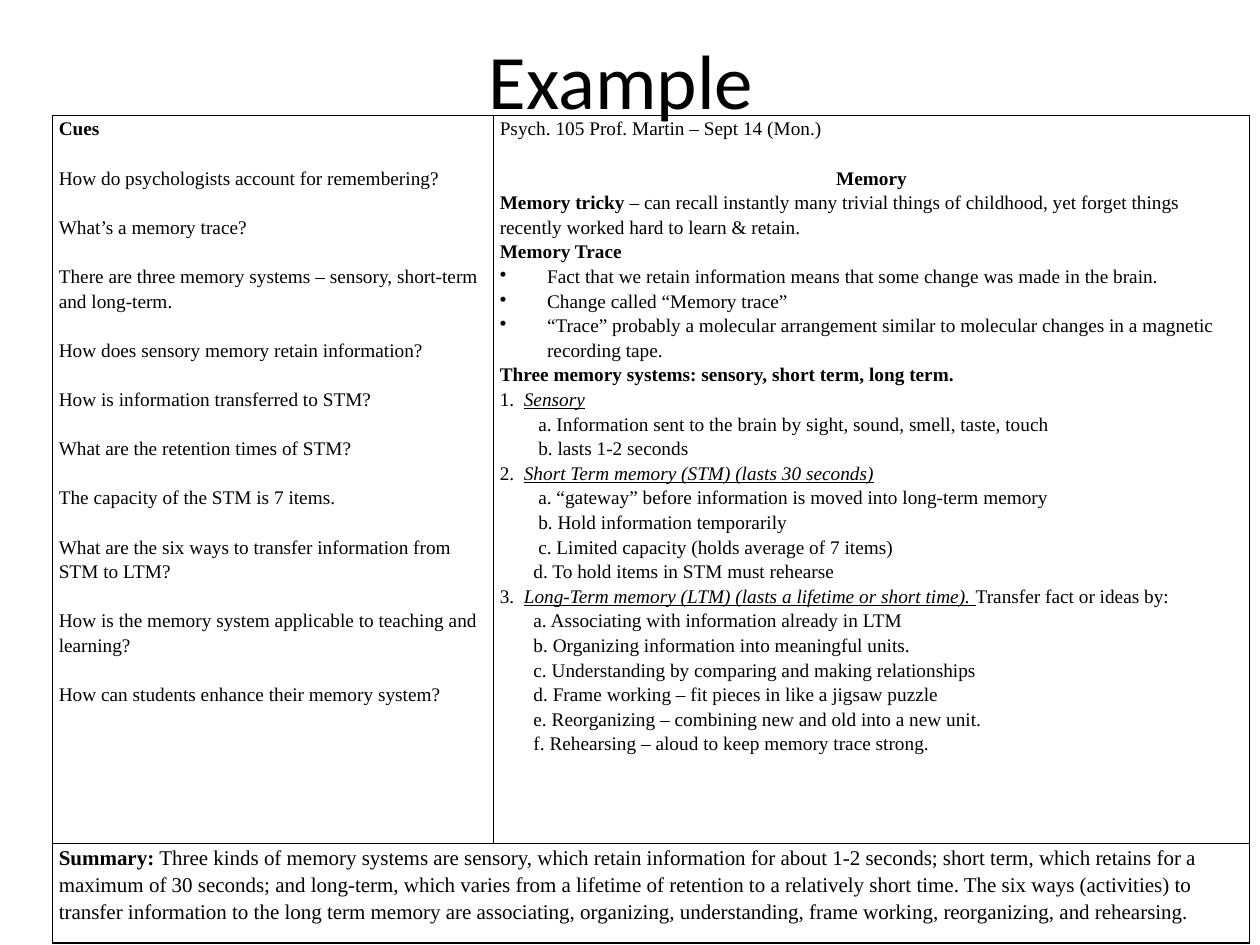
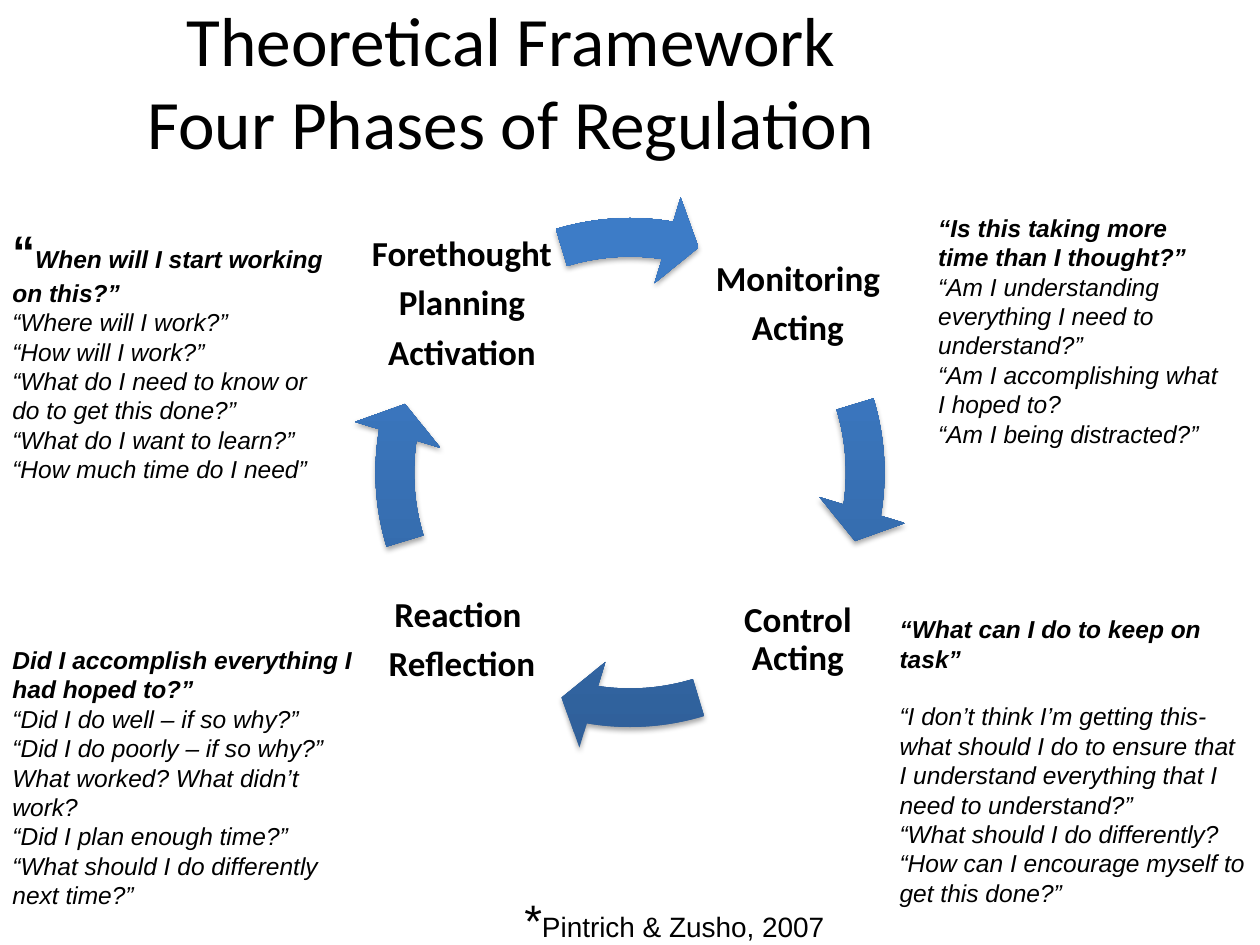
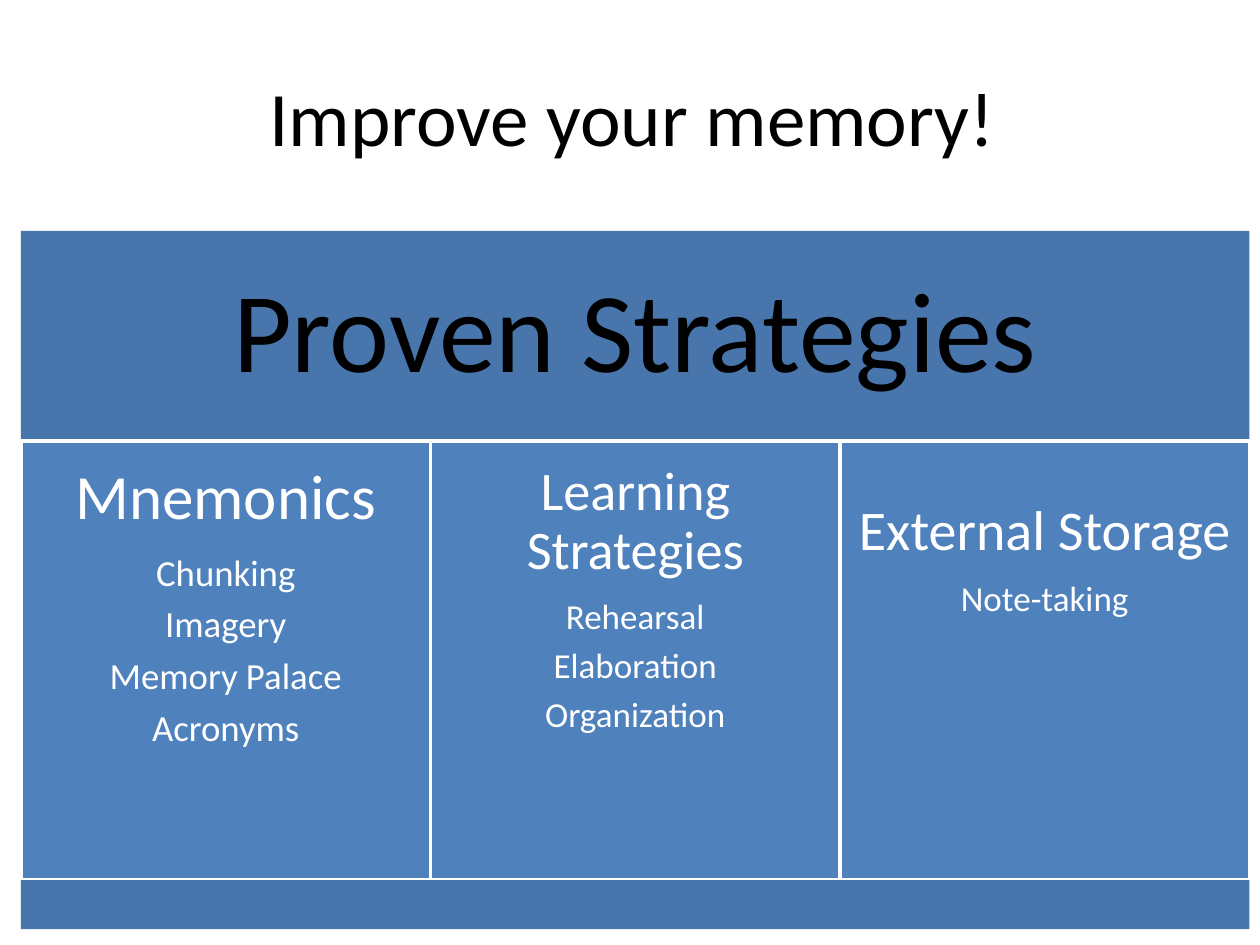
from lxml import etree
from pptx import Presentation, util as u
from pptx.dml.color import RGBColor
from pptx.enum import shapes, text
from pptx.oxml import parse_xml
from pptx.oxml.ns import nsdecls, qn

Pt = u.Pt
BLACK, WHITE = "000000", "FFFFFF"
BAND, PANEL = "4875AC", "4F81BD"
DARK, LIGHT = "2F5F99", "3D7CC7"
HEAD, NOTE, ASK = "Calibri", "Times New Roman", "Arial"

# Runs are (text, marks[, size]); marks hold b, i and u.
CUES = [
    "How do psychologists account for remembering?",
    "What’s a memory trace?",
    "There are three memory systems – sensory, short-term and long-term.",
    "How does sensory memory retain information?",
    "How is information transferred to STM?",
    "What are the retention times of STM?",
    "The capacity of the STM is 7 items.",
    "What are the six ways to transfer information from STM to LTM?",
    "How is the memory system applicable to teaching and learning?",
    "How can students enhance their memory system?",
]

# Each line of the notes is (kind, runs).
NOTES = [
    ("plain", [("Psych. 105 Prof. Martin – Sept 14 (Mon.)", "")]),
    ("topic", [("Memory", "b")]),
    ("plain", [("Memory tricky ", "b"),
               ("– can recall instantly many trivial things of childhood, "
                "yet forget things recently worked hard to learn & retain.", "")]),
    ("plain", [("Memory Trace", "b")]),
    ("bullet", [("Fact that we retain information means that some change "
                 "was made in the brain.", "")]),
    ("bullet", [("Change called “Memory trace”", "")]),
    ("bullet", [("“Trace” probably a molecular arrangement similar to "
                 "molecular changes in a magnetic recording tape.", "")]),
    ("plain", [("Three memory systems: sensory, short term, long term.", "b")]),
    ("number", [("1.\t", ""), ("Sensory", "iu")]),
    ("deep", [("a. Information sent to the brain by sight, sound, smell, "
               "taste, touch", "")]),
    ("deep", [("b. lasts 1-2 seconds", "")]),
    ("number", [("2.\t", ""), ("Short Term memory (STM) (lasts 30 seconds)", "iu")]),
    ("deep", [("a. “gateway” before information is moved into long-term memory", "")]),
    ("deep", [("b. Hold information temporarily", "")]),
    ("deep", [("c. Limited capacity (holds average of 7 items)", "")]),
    ("item", [("d. To hold items in STM must rehearse", "")]),
    ("number", [("3.\t", ""),
                ("Long-Term memory (LTM) (lasts a lifetime or short time). ", "iu"),
                ("Transfer fact or ideas by:", "")]),
    ("item", [("a. Associating with information already in LTM", "")]),
    ("item", [("b. Organizing information into meaningful units.", "")]),
    ("item", [("c. Understanding by comparing and making relationships", "")]),
    ("item", [("d. Frame working – fit pieces in like a jigsaw puzzle", "")]),
    ("item", [("e. Reorganizing – combining new and old into a new unit.", "")]),
    ("item", [("f. Rehearsing – aloud to keep memory trace strong.", "")]),
]
# Left margin and hanging indent of each kind
INDENT = {"plain": (0, 0), "topic": (0, 0), "bullet": (27, 27),
          "number": (13.75, 13.75), "deep": (22, 0), "item": (19.25, 0)}

SUMMARY = [
    ("Summary:", "b"),
    (" Three kinds of memory systems are sensory, which retain information for "
     "about 1-2 seconds; short term, which retains for a maximum of 30 seconds; "
     "and long-term, which varies from a lifetime of retention to a relatively "
     "short time. The six ways (activities) to transfer information to the long "
     "term memory are associating, organizing, understanding, frame working, "
     "reorganizing, and rehearsing.", ""),
]

# Clockwise from top right: (column, row, lines)
PHASES = [
    (1, 0, ["Monitoring", "Acting"]),
    (1, 1, ["Control Acting"]),
    (0, 1, ["Reaction ", "Reflection"]),
    (0, 0, ["Forethought", "Planning", "Activation"]),
]

# (box, runs of the lead question, gap below it, other questions)
ASKS = [
    ((507, 347.5, 213, 226), [("“What can I do to keep on task”", "bi")], 16.1,
     ["“I don’t think I’m getting this- what should I do to ensure that I "
      "understand everything that I need to understand?”",
      "“What should I do differently?",
      "“How can I encourage myself to get this done?”"]),
    ((529, 118, 176, 160.5), [("“Is this taking more time than I thought?”", "bi")], 0,
     ["“Am I understanding everything I need to understand?”",
      "“Am I accomplishing what I hoped to?",
      "“Am I being distracted?”"]),
    ((0, 124, 196, 158), [("“", "b", 26),
                          ("When will I start working on this?”", "bi")], 0,
     ["“Where will I work?”",
      "“How will I work?”",
      "“What do I need to know or do to get this done?”",
      "“What do I want to learn?”",
      "“How much time do I need”"]),
    ((0, 365, 217, 160.5), [("Did I accomplish everything I had hoped to?”", "bi")], 0,
     ["“Did I do well – if so why?”",
      "“Did I do poorly – if so why?”",
      "What worked? What didn’t work?",
      "“Did I plan enough time?”",
      "“What should I do differently next time?”"]),
]

# (heading, heading size, item size, top inset, items)
PANELS = [
    ("Mnemonics", 36, 21, 14, ["Chunking", "Imagery", "Memory Palace", "Acronyms"]),
    ("Learning Strategies", 31, 20, 13, ["Rehearsal", "Elaboration", "Organization"]),
    ("External Storage", 32, 20, 35, ["Note-taking"]),
]


def hue(code):
    return RGBColor.from_string(code)


def spots(box):
    return [Pt(n) for n in box]


def write(par, runs, font, size, color=BLACK, gap=0, lead=None, mid=False):
    """Fill a paragraph with runs; gap is the space above, lead the line spacing."""
    for words, marks, *own in runs:
        run = par.add_run()
        run.text = words
        face = run.font
        face.name, face.size = font, Pt(own[0] if own else size)
        face.color.rgb = hue(color)
        face.bold, face.italic, face.underline = (m in marks for m in "biu")
    par.space_before = Pt(gap)
    if lead:
        par.line_spacing = lead
    par.alignment = text.PP_ALIGN.CENTER if mid else text.PP_ALIGN.LEFT


def lines(frame):
    """Yield the first paragraph of a frame, then new ones."""
    yield frame.paragraphs[0]
    while True:
        yield frame.add_paragraph()


def stack(frame, rows, color):
    """Write centred, tight (words, size, marks) rows."""
    for (words, size, marks), par in zip(rows, lines(frame)):
        write(par, [(words, marks)], HEAD, size, color, lead=0.9, mid=True)
        par.space_after = Pt(round(size * 0.33, 2))


def inset(frame, side, top):
    frame.word_wrap = True
    frame.margin_left = frame.margin_right = Pt(side)
    frame.margin_top = frame.margin_bottom = Pt(top)


def start(deck, box, rows, size=44):
    """Add a slide with a centred title."""
    slide = deck.slides.add_slide(deck.slide_layouts[5])
    title = slide.shapes.title
    title.left, title.top, title.width, title.height = spots(box)
    frame = title.text_frame
    frame.auto_size = text.MSO_AUTO_SIZE.NONE
    frame.vertical_anchor = text.MSO_ANCHOR.MIDDLE
    for words, par in zip(rows, lines(frame)):
        write(par, [(words, "")], HEAD, size, mid=True)
    return slide


def textbox(slide, box, side=7.2, top=3.6):
    frame = slide.shapes.add_textbox(*spots(box)).text_frame
    inset(frame, side, top)
    return frame


def block(slide, box, fill, edge=None):
    shape = slide.shapes.add_shape(shapes.MSO_SHAPE.RECTANGLE, *spots(box))
    shape.shadow.inherit = False
    shape.fill.solid()
    shape.fill.fore_color.rgb = hue(fill)
    if edge:
        shape.line.color.rgb = hue(edge)
        shape.line.width = Pt(2)
    else:
        shape.line.fill.background()
    return shape.text_frame


def frame_cell(cell):
    """Give a cell thin black borders, no fill and narrow margins."""
    for side in "LRTB":
        cell._tc.get_or_add_tcPr().append(parse_xml(
            f'<a:ln{side} {nsdecls("a")} w="{Pt(1)}"><a:solidFill>'
            f'<a:srgbClr val="{BLACK}"/></a:solidFill></a:ln{side}>'))
    cell.fill.background()
    cell.margin_left = cell.margin_right = Pt(3.6)
    cell.margin_top = cell.margin_bottom = 0


def notes(deck):
    slide = start(deck, (36, 0, 648, 90), ["Example "])
    grid = slide.shapes.add_table(2, 2, *spots((30, 66, 684, 473))).table
    grid.first_row = grid.horz_banding = False
    for col, wide in zip(grid.columns, (252, 432)):
        col.width = Pt(wide)
    for row, high in zip(grid.rows, (416, 57)):
        row.height = Pt(high)
    for cell in grid.iter_cells():
        frame_cell(cell)
    grid.cell(1, 0).merge(grid.cell(1, 1))

    size, lead, line = 11, 1.15, 14.05
    rows = lines(grid.cell(0, 0).text_frame)
    write(next(rows), [("Cues", "b")], NOTE, size, lead=lead)
    for cue, par in zip(CUES, rows):
        write(par, [(cue, "")], NOTE, size, gap=line, lead=lead)

    for (kind, runs), par in zip(NOTES, lines(grid.cell(0, 1).text_frame)):
        topic = kind == "topic"
        write(par, runs, NOTE, size, gap=line if topic else 0, lead=lead, mid=topic)
        left, hang = INDENT[kind]
        props = par._p.get_or_add_pPr()
        props.set("marL", str(Pt(left)))
        props.set("indent", str(-Pt(hang)))
        if kind == "bullet":
            etree.SubElement(props, qn("a:buChar")).set("char", "•")

    write(grid.cell(1, 0).text_frame.paragraphs[0], SUMMARY, NOTE, 12, lead=lead)


def arrow(slide, step):
    """Draw one arc of the cycle, a quarter turn on for each step."""
    shape = slide.shapes.add_shape(
        shapes.MSO_SHAPE.CIRCULAR_ARROW, *spots((200, 110, 320, 320)))
    turn = 54 * step
    sizes = (0.069, 4.65, 5.51 + turn, (205.84 + turn) % 216, 0.08)
    for n, size in enumerate(sizes):
        shape.adjustments[n] = size
    shape.line.fill.background()
    shape.fill.gradient()
    shape.fill.gradient_angle = 90
    for stop, code, spot in zip(shape.fill.gradient_stops, (DARK, LIGHT), (0, 0.8)):
        stop.color.rgb, stop.position = hue(code), spot
    shape._element.spPr.append(parse_xml(
        f'<a:effectLst {nsdecls("a")}><a:outerShdw blurRad="{Pt(3.1)}" '
        f'dist="{Pt(1.8)}" dir="5400000" rotWithShape="0"><a:srgbClr val="{BLACK}">'
        '<a:alpha val="35000"/></a:srgbClr></a:outerShdw></a:effectLst>'))


def cycle(deck):
    slide = start(deck, (35, 1, 648, 90),
                  ["Theoretical Framework", "Four Phases of Regulation"], 39.6)
    first = slide.shapes.title.text_frame.paragraphs[0]
    first._p.get_or_add_pPr().set("marR", str(Pt(134)))

    for step, (col, row, words) in enumerate(PHASES):
        frame = textbox(slide, (207.5 + 192 * col, 117.5 + 192 * row, 113, 113), 2, 2)
        frame.vertical_anchor = text.MSO_ANCHOR.MIDDLE
        stack(frame, [(w, 20, "b") for w in words], BLACK)
        arrow(slide, step)

    for box, ask, gap, others in ASKS:
        rows = lines(textbox(slide, box))
        write(next(rows), ask, ASK, 14)
        for n, (words, par) in enumerate(zip(others, rows)):
            write(par, [(words, "i")], ASK, 14, gap=0 if n else gap)

    credit = textbox(slide, (292.5, 506, 203, 39))
    write(credit.paragraphs[0], [("*", "", 26), ("Pintrich & Zusho, 2007", "")], ASK, 16)


def panels(deck):
    slide = start(deck, (72, 30, 579, 72), ["Improve your memory!"])
    left, wide, top, high = 12, 234, 252, 251
    full = wide * len(PANELS)
    band = block(slide, (left, 132, full, 119.5), BAND)
    stack(band, [("Proven Strategies", 65, "")], BLACK)
    for n, (name, big, small, drop, items) in enumerate(PANELS):
        frame = block(slide, (left + n * wide, top, wide, high), PANEL, WHITE)
        inset(frame, 9.4, drop)
        frame.vertical_anchor = text.MSO_ANCHOR.TOP
        stack(frame, [(name, big, "")] + [(i, small, "") for i in items], WHITE)
    block(slide, (left, top + high, full, 28), BAND)


def main():
    deck = Presentation()
    deck.slide_width, deck.slide_height = Pt(720), Pt(540)
    for build in (notes, cycle, panels):
        build(deck)
    deck.save("out.pptx")


if __name__ == "__main__":
    main()
